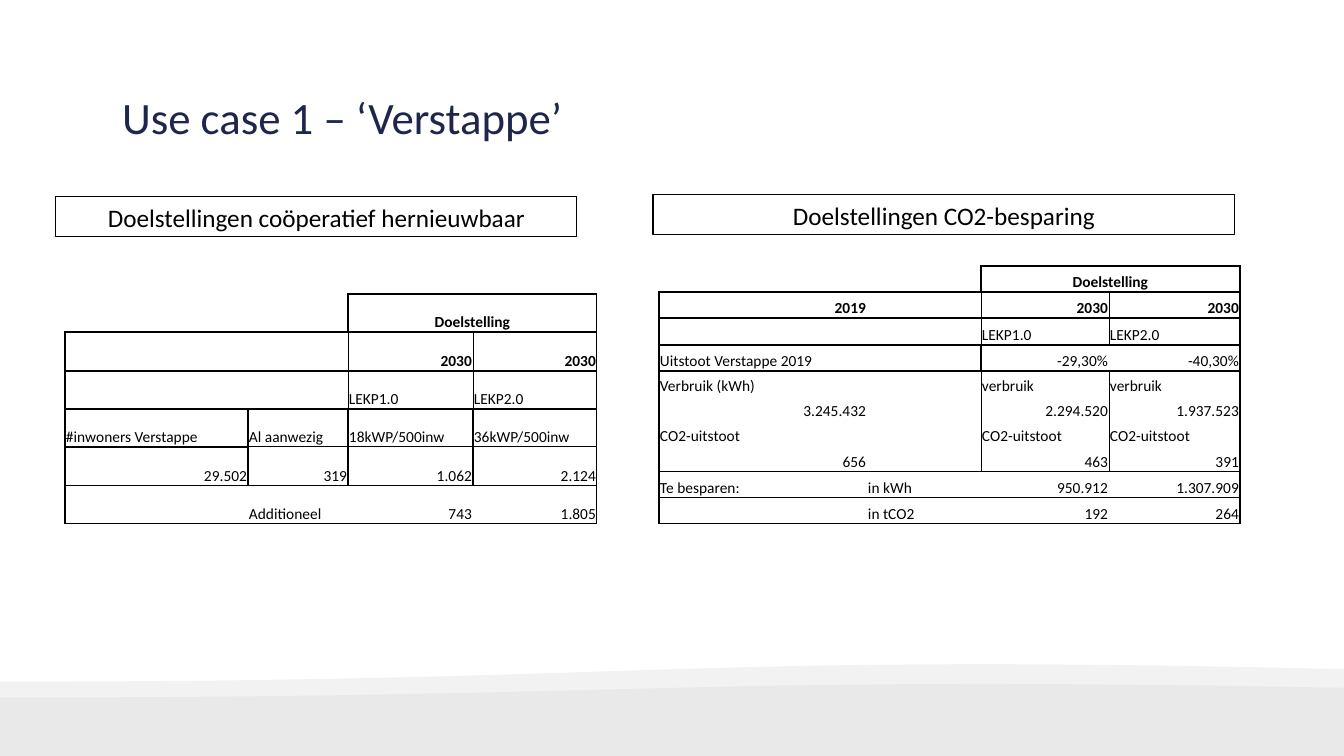
from collections import defaultdict

from lxml.etree import SubElement
from pptx import Presentation
from pptx.dml.color import RGBColor
from pptx.enum.shapes import MSO_SHAPE as SHAPE
from pptx.enum.text import MSO_ANCHOR as ANCHOR, MSO_AUTO_SIZE as AUTO, PP_ALIGN as ALIGN
from pptx.oxml.ns import qn
from pptx.util import Pt

PX = 914400 / 100.8
FONT = "Calibri"
BLACK = RGBColor(0, 0, 0)
NAVY = RGBColor(0x1E, 0x26, 0x4B)
PALE_GREY = RGBColor(0xF2, 0xF2, 0xF2)
GREY = RGBColor(0xD9, 0xD9, 0xD9)
NO_STYLE = "{2D5ABB26-0587-4C30-8999-92F81FD0307C}"


def px(*lengths):
    """Turn pixels into a list of EMU."""
    return [round(n * PX) for n in lengths]


def write(p, text, size, color=BLACK, align=ALIGN.LEFT, bold=False):
    p.alignment = align
    r = p.add_run()
    r.text = text
    r.font.color.rgb = color
    for name, value in dict(name=FONT, size=Pt(size), bold=bold).items():
        setattr(r.font, name, value)


prs = Presentation()
prs.slide_width, prs.slide_height = px(1344, 756)
s = prs.slides.add_slide(prs.slide_layouts[5])

# Waves along the bottom
for top, height, color, alpha in ((663, 94, PALE_GREY, 100), (683, 73, GREY, 35)):
    wave = s.shapes.add_shape(SHAPE.FLOWCHART_DOCUMENT, *px(-1, top, 1345, height))
    wave.rotation = 180
    wave.shadow.inherit = False
    wave.fill.solid()
    wave.fill.fore_color.rgb = color
    wave.line.fill.background()
    srgb = wave.fill._xPr.find(".//" + qn("a:srgbClr"))
    SubElement(srgb, qn("a:alpha"), val=str(alpha * 1000))

# Title
title = s.shapes.title
title.left, title.top, title.width, title.height = px(112, 91, 1027, 44)
tf = title.text_frame
for name, value in dict(word_wrap=True, auto_size=AUTO.NONE, vertical_anchor=ANCHOR.TOP).items():
    setattr(tf, name, value)
tf.paragraphs[0].line_spacing = 0.9
write(tf.paragraphs[0], "Use case 1 – ‘Verstappe’", 32, NAVY)

# Headings above the tables
for text, place in (
    ("Doelstellingen coöperatief hernieuwbaar", (56, 197, 521, 40)),
    ("Doelstellingen CO2-besparing", (653, 195, 582, 40)),
):
    heading = s.shapes.add_shape(SHAPE.RECTANGLE, *px(*place))
    heading.shadow.inherit = False
    heading.fill.background()
    heading.line.color.rgb = BLACK
    heading.line.width = Pt(0.75)
    heading.text_frame.word_wrap = True
    write(heading.text_frame.paragraphs[0], text, 18, align=ALIGN.CENTER)

# Outlined blocks: first row, first column, last row, last column, left pt, top pt
HEADER_BLOCKS = [
    (0, 2, 0, 3, 1, 1),
    (1, 0, 1, 1, 1, 1), (1, 2, 1, 3, 0.5, 1),
    (2, 0, 2, 1, 1, 1), (2, 2, 2, 3, 0.5, 1),
]
renewable = dict(
    at=(65, 294), cols=(183, 100, 125, 124), heights=(38, 39, 38, 38, 39, 38),
    merges=[(0, 2)],
    rows=[
        ("", "", "Doelstelling", ""),
        ("", "", "2030", "2030"),
        ("", "", "LEKP1.0", "LEKP2.0"),
        ("#inwoners Verstappe", "Al aanwezig", "18kWP/500inw", "36kWP/500inw"),
        ("29.502", "319", "1.062", "2.124"),
        ("", "Additioneel", "743", "1.805"),
    ],
    blocks=HEADER_BLOCKS + [(3, 0, 4, 0, 1, 2)]
    + [(r, c, r, c, 1, 1) for r in (3, 4) for c in (1, 2, 3)]
    + [(5, 0, 5, 3, 1, 1)],
)
savings = dict(
    at=(659, 266), cols=(208, 114, 128, 131),
    heights=(26, 26, 27, 26, 25, 25, 25, 26, 26, 26),
    merges=[(0, 2), (3, 0)],
    rows=[
        ("", "", "Doelstelling", ""),
        ("2019", "", "2030", "2030"),
        ("", "", "LEKP1.0", "LEKP2.0"),
        ("Uitstoot Verstappe 2019", "", "-29,30%", "-40,30%"),
        ("Verbruik (kWh)", "", "verbruik", "verbruik"),
        ("3.245.432", "", "2.294.520", "1.937.523"),
        ("CO2-uitstoot", "", "CO2-uitstoot", "CO2-uitstoot"),
        ("656", "", "463", "391"),
        ("Te besparen:", "in kWh", "950.912", "1.307.909"),
        ("", "in tCO2", "192", "264"),
    ],
    blocks=HEADER_BLOCKS
    + [(3, 0, 7, 1, 1, 2), (3, 2, 7, 3, 0.5, 2), (8, 0, 9, 3, 1, 1)],
)

for spec in (savings, renewable):
    cols, heights, rows = spec["cols"], spec["heights"], spec["rows"]
    frame = s.shapes.add_table(
        len(rows), len(cols), *px(*spec["at"], sum(cols), sum(heights)))
    table = frame.table
    table.first_row = table.horz_banding = False
    table._tbl.tblPr.find(qn("a:tableStyleId")).text = NO_STYLE
    for column, width in zip(table.columns, px(*cols)):
        column.width = width
    for row, height in zip(table.rows, px(*heights)):
        row.height = height
    for r, c in spec["merges"]:
        table.cell(r, c).merge(table.cell(r, c + 1))

    # Neighbouring cells share the width of their common edge
    edges = defaultdict(dict)
    for r1, c1, r2, c2, left, top in spec["blocks"]:
        for r in range(r1, r2 + 1):
            edges[r, c1]["L"] = edges[r, c1 - 1]["R"] = left
            for c in range(c1, c2 + 1):
                if c + table.cell(r, c).span_width > c2:
                    edges[r, c]["R"] = 1
        for c in range(c1, c2 + 1):
            edges[r1, c]["T"] = edges[r1 - 1, c]["B"] = top
            edges[r2, c]["B"] = 1

    margin, zero = px(1, 0)
    cell_format = dict(margin_left=margin, margin_right=margin, margin_top=margin,
                       margin_bottom=zero, vertical_anchor=ANCHOR.BOTTOM)
    for r, texts in enumerate(rows):
        for c, text in enumerate(texts):
            cell = table.cell(r, c)
            for name, value in cell_format.items():
                setattr(cell, name, value)
            p = cell.text_frame.paragraphs[0]
            if text:
                numeric = not text.strip("-0123456789.,%")
                align = ALIGN.CENTER if r == 0 else ALIGN.RIGHT if numeric else ALIGN.LEFT
                write(p, text, 11, align=align, bold=r < 2)
            else:
                SubElement(p._p, qn("a:endParaRPr"), sz="1100")
            for side in "LRTB":
                if side in edges[r, c]:
                    ln = SubElement(cell._tc.get_or_add_tcPr(), qn("a:ln" + side),
                                    w=str(Pt(edges[r, c][side])))
                    fill = SubElement(ln, qn("a:solidFill"))
                    SubElement(fill, qn("a:srgbClr"), val=str(BLACK))

prs.save("out.pptx")
